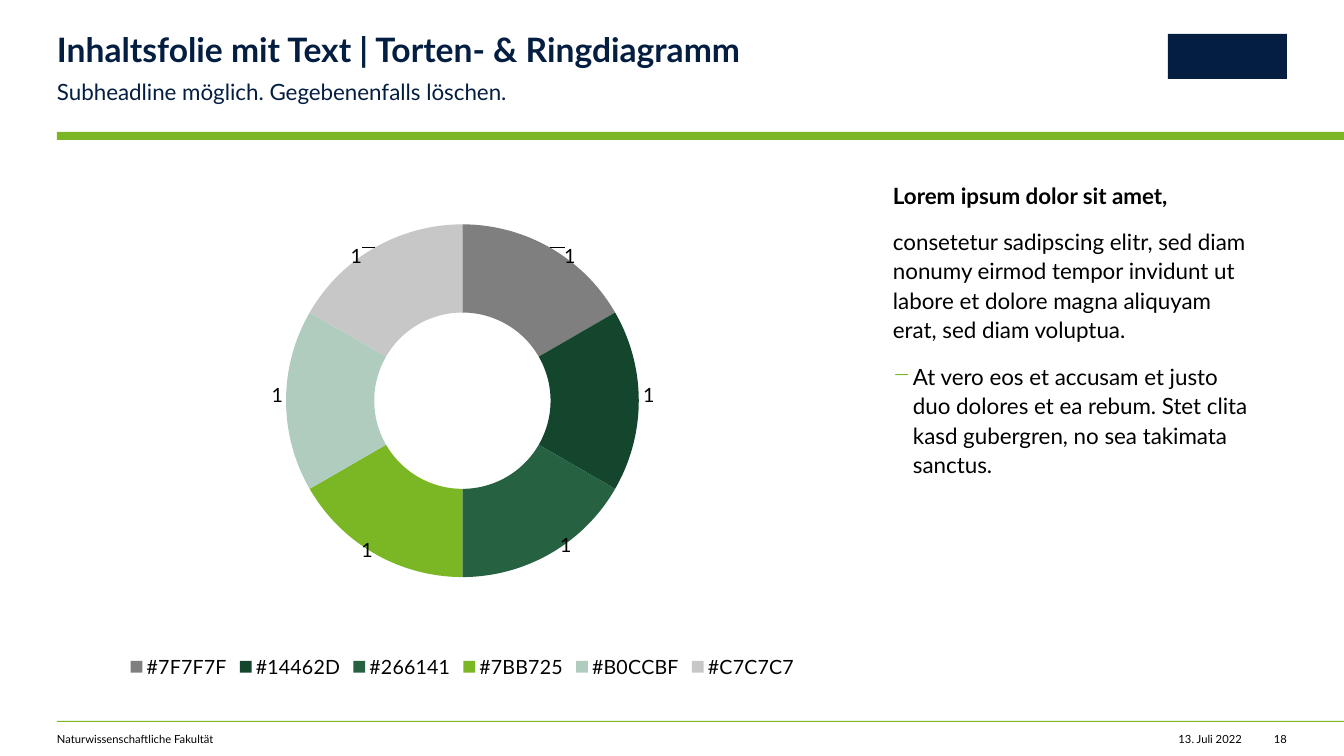
from pptx import Presentation
from pptx.chart.data import CategoryChartData
from pptx.dml.color import RGBColor
from pptx.enum.chart import XL_CHART_TYPE as CT, XL_LEGEND_POSITION as LP
from pptx.enum.shapes import MSO_SHAPE as SHAPE
from pptx.enum.text import PP_ALIGN as ALIGN
from pptx.oxml import parse_xml
from pptx.oxml.ns import nsdecls, qn
from pptx.util import Emu, Pt

NAVY, GREEN, BLACK = "041E42", "7BB725", "000000"
FONT = "Lato"
BARS = [
    ((57, 132, 1287, 8), GREEN),
    ((57, 721, 1287, 1), GREEN),
    ((1168, 34, 119, 45), NAVY),
]
LINES = [
    ("Inhaltsfolie mit Text | Torten- & Ringdiagramm", (57, 33, 755, 36),
     dict(size=24, color=NAVY, bold=True, spacing=0.9)),
    ("Subheadline möglich. Gegebenenfalls löschen.", (57, 76, 755, 27),
     dict(size=16, color=NAVY, spacing=1.1, after=12)),
    ("Naturwissenschaftliche Fakultät", (57, 732, 603, 13), dict(size=8)),
    ("13. Juli 2022", (1167, 732, 75, 13), dict(size=8, align=ALIGN.RIGHT)),
    ("18", (1273, 732, 14, 13), dict(size=8, align=ALIGN.RIGHT)),
]
BODY_BOX = (893, 179, 394, 504)
BODY = [
    ("Lorem ipsum dolor sit amet,", True, False),
    ("consetetur sadipscing elitr, sed diam nonumy eirmod tempor invidunt ut "
     "labore et dolore magna aliquyam erat, sed diam voluptua.", False, False),
    ("At vero eos et accusam et justo duo dolores et ea rebum. Stet clita kasd "
     "gubergren, no sea takimata sanctus.", False, True),
]
CHART_BOX = (57, 179, 811, 504)
RING = ["7F7F7F", "14462D", "266141", "7BB725", "B0CCBF", "C7C7C7"]
VALUES = [1] * len(RING)
LABEL_SHIFTS = [(41, -30), (54, -6), (37, 29), (-29, 35), (-53, -6), (-40, -30)]
PLOT = dict(layoutTarget="inner", xMode="edge", yMode="edge",
            x=0.21, y=0.09, w=0.58, h=0.7)
HOLE = 80


def px(n):
    return Emu(round(n * 914400 / 100.8))


def place(box):
    return [px(n) for n in box]


def rgb(color):
    return RGBColor.from_string(color)


def style(font, size, color=BLACK, bold=False, name=FONT):
    font.name, font.size, font.bold = name, Pt(size), bold
    font.color.rgb = rgb(color)


def text_frame(slide, box, wrap=True, right=0):
    tf = slide.shapes.add_textbox(*place(box)).text_frame
    tf.word_wrap = wrap
    tf.margin_left = tf.margin_top = tf.margin_bottom = 0
    tf.margin_right = px(right)
    return tf


def write(p, text, size, color=BLACK, bold=False, spacing=1.0, after=0,
          align=ALIGN.LEFT):
    p.text = text
    p.alignment, p.line_spacing, p.space_after = align, spacing, Pt(after)
    style(p.runs[0].font, size, color, bold)


def add_bullet(p):
    pPr = p.runs[0].font._element.getparent().getparent().get_or_add_pPr()
    pPr.set("marL", str(px(20)))
    pPr.set("indent", str(-px(20)))
    ns = nsdecls("a")
    pPr.append(parse_xml(f'<a:buClr {ns}><a:srgbClr val="{GREEN}"/></a:buClr>'))
    pPr.append(parse_xml(f'<a:buChar {ns} char="−"/>'))


def layout(**values):
    parts = "".join(f'<c:{k} val="{v}"/>' for k, v in values.items())
    return parse_xml(f'<c:layout {nsdecls("c")}><c:manualLayout>{parts}'
                     '</c:manualLayout></c:layout>')


def add_ring(slide):
    data = CategoryChartData()
    data.categories = [f"#{color}" for color in RING]
    data.add_series("Series 1", VALUES)
    chart = slide.shapes.add_chart(CT.DOUGHNUT, *place(CHART_BOX), data).chart
    style(chart.font, 10, name="Arial")
    chart.has_title = False
    chart.has_legend = True
    chart.legend.position = LP.BOTTOM
    chart.legend.include_in_layout = False
    style(chart.legend.font, 14)

    plot = chart.plots[0]
    plot.vary_by_categories = True
    series = plot.series[0]
    series.data_labels.show_value = True
    style(series.data_labels.font, 14)
    for i, color in enumerate(RING):
        point = series.points[i]
        point.format.fill.solid()
        point.format.fill.fore_color.rgb = rgb(color)
        point.format.line.fill.background()
        style(point.data_label.font, 14)

    root = chart.element
    for label, (dx, dy) in zip(root.iter(qn("c:dLbl")), LABEL_SHIFTS):
        shift = layout(x=round(dx / CHART_BOX[2], 3), y=round(dy / CHART_BOX[3], 3))
        label.find(qn("c:idx")).addnext(shift)
    area = next(root.iter(qn("c:plotArea")))
    for old in area.findall(qn("c:layout")):
        area.remove(old)
    area.insert(0, layout(**PLOT))
    next(root.iter(qn("c:holeSize"))).set("val", str(HOLE))


def main():
    prs = Presentation()
    prs.slide_width, prs.slide_height = px(1344), px(756)
    s = prs.slides.add_slide(prs.slide_layouts[6])
    for box, color in BARS:
        sp = s.shapes.add_shape(SHAPE.RECTANGLE, *place(box))
        sp.shadow.inherit = False
        sp.fill.solid()
        sp.fill.fore_color.rgb = rgb(color)
        sp.line.fill.background()
    for text, box, look in LINES:
        tf = text_frame(s, box, wrap="align" not in look)
        write(tf.paragraphs[0], text, **look)
    tf = text_frame(s, BODY_BOX, right=39)
    for i, (text, bold, bullet) in enumerate(BODY):
        p = tf.add_paragraph() if i else tf.paragraphs[0]
        write(p, text, 16, bold=bold, spacing=1.1, after=12)
        if bullet:
            add_bullet(p)
    add_ring(s)
    prs.save("out.pptx")


if __name__ == "__main__":
    main()
